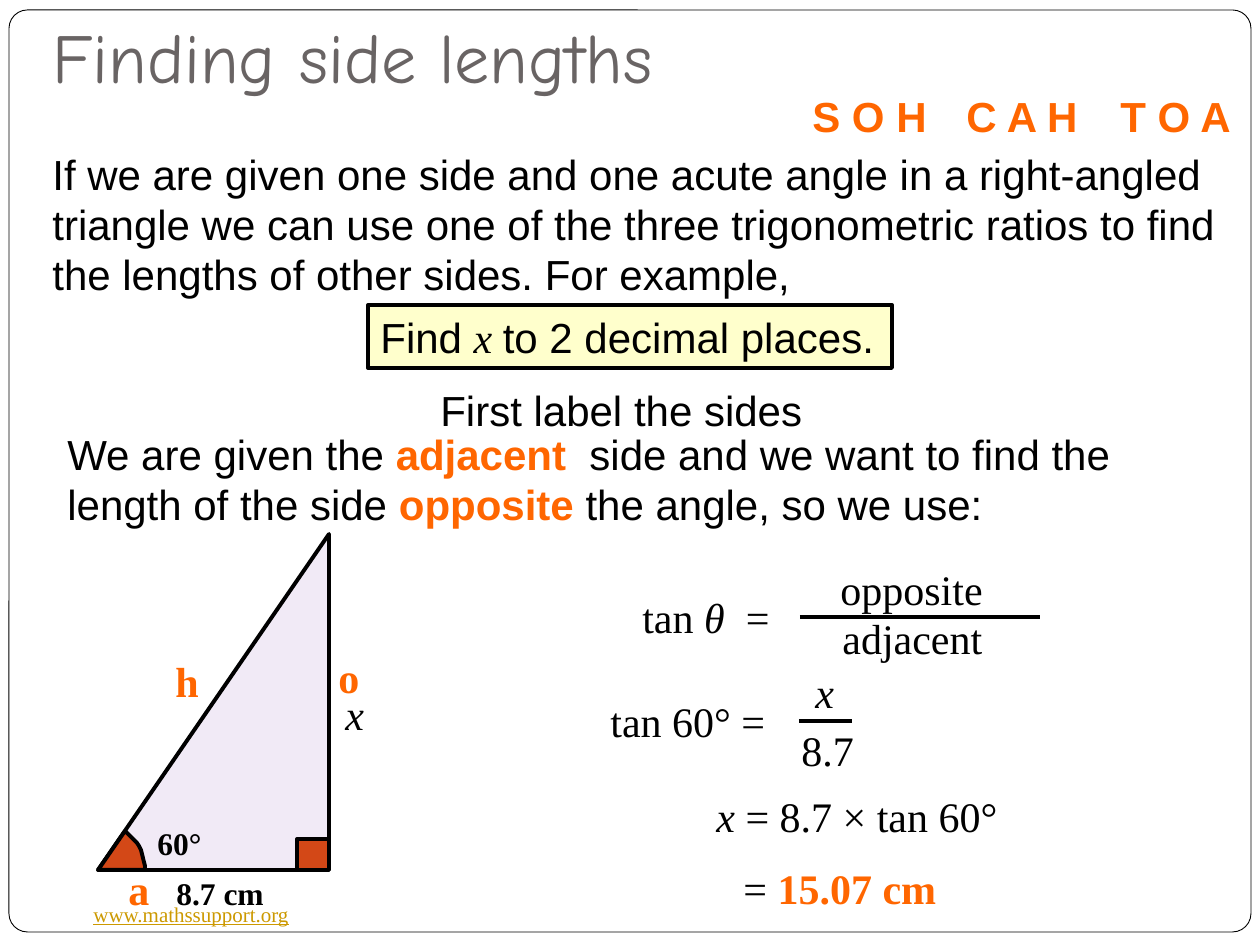
import math
from dataclasses import dataclass

from lxml import etree
from pptx import Presentation
from pptx import util as u
from pptx.dml.color import RGBColor
from pptx.enum import shapes, text
from pptx.oxml.ns import qn


@dataclass(frozen=True)
class Theme:
    sans: str = "Arial"
    serif: str = "Times New Roman"
    display: str = "Comic Neue"
    black: str = "000000"
    white: str = "FFFFFF"
    grey: str = "696464"
    orange: str = "FF6600"
    gold: str = "CC9900"
    lilac: str = "F1EAF6"
    rust: str = "D34817"
    cream: str = "FFFFCC"
    shade: str = "DDDDDD"
    title: int = 40
    body: int = 24
    label: int = 18
    small: int = 12
    stroke: float = 2.25


T = Theme()
PX = 914400 / 126


def px(*lengths):
    return [u.Emu(round(n * PX)) for n in lengths]


def write(sp, runs, font, size=T.body, wrap=False):
    """Fill a shape with one paragraph of (text, colour, style) runs; style holds b, i, u, or s for serif."""
    tf = sp.text_frame
    tf.word_wrap = wrap
    tf.auto_size = text.MSO_AUTO_SIZE.SHAPE_TO_FIT_TEXT
    p = tf.paragraphs[0]
    p.alignment = text.PP_ALIGN.LEFT
    for words, colour, style in runs:
        r = p.add_run()
        r.text = words
        r.font.name = T.serif if "s" in style else font
        r.font.size = u.Pt(size)
        r.font.bold = "b" in style
        r.font.italic = "i" in style
        r.font.underline = "u" in style
        r.font.color.rgb = RGBColor.from_string(colour)


prs = Presentation()
prs.slide_width, prs.slide_height = px(1260, 945)
s = prs.slides.add_slide(prs.slide_layouts[6])

# Frame, triangle, right-angle mark, question box and angle sector
kinds = shapes.MSO_SHAPE
frame = s.shapes.add_shape(kinds.ROUNDED_RECTANGLE, *px(9, 10, 1242, 922))
frame.adjustments[0] = 0.02
triangle = s.shapes.add_shape(kinds.RIGHT_TRIANGLE, *px(98, 534, 231, 336))
triangle._element.spPr.find(qn("a:xfrm")).set("flipH", "1")

radius, cx, cy = 47, 98, 870
arc = [(cx + radius * math.cos(math.radians(a)), cy - radius * math.sin(math.radians(a)))
       for a in range(0, 56, 5)]
builder = s.shapes.build_freeform(cx, cy, scale=PX)
builder.add_line_segments(arc, close=True)
sector = builder.convert_to_shape()

right_angle = s.shapes.add_shape(kinds.RECTANGLE, *px(297, 839, 32, 31))
question = s.shapes.add_shape(kinds.RECTANGLE, *px(368, 305, 524, 63))

for sp, fill, width in [
    (frame, T.white, 0.5),
    (triangle, T.lilac, T.stroke),
    (sector, T.rust, T.stroke),
    (right_angle, T.rust, T.stroke),
    (question, T.cream, T.stroke),
]:
    sp.shadow.inherit = False
    sp.fill.solid()
    sp.fill.fore_color.rgb = RGBColor.from_string(fill)
    sp.line.color.rgb = RGBColor.from_string(T.black)
    sp.line.width = u.Pt(width)

write(question, [("Find ", T.black, ""), ("x ", T.black, "is"),
                 ("to 2 decimal places.", T.black, "")], T.sans)

# Title
title = s.shapes.add_textbox(*px(40, 26, 1071, 84))
write(title, [("Finding side lengths", T.grey, "")], T.display, T.title, wrap=True)
title.text_frame.auto_size = text.MSO_AUTO_SIZE.NONE
title.text_frame.vertical_anchor = text.MSO_ANCHOR.BOTTOM
title.text_frame.margin_bottom = u.Inches(0.1)

# Sentences
for box, runs in [
    ((40, 142, 1188, 165), [
        ("If we are given one side and one acute angle in a right-angled triangle "
         "we can use one of the three trigonometric ratios to find the lengths of "
         "other sides. For example,", T.black, "")]),
    ((428, 378, 431, 63), [("First label the sides", T.black, "")]),
    ((55, 422, 1157, 115), [
        ("We are given the ", T.black, ""), ("adjacent", T.orange, "b"),
        ("  side and we want to find the length of the side ", T.black, ""),
        ("opposite", T.orange, "b"), (" the angle, so we use:", T.black, "")]),
]:
    write(s.shapes.add_textbox(*px(*box)), runs, T.sans, wrap=True)

# Triangle labels, working and footer
for box, size, runs in [
    ((145, 818, 73, 50), T.label, [("60°", T.black, "b")]),
    ((164, 868, 125, 50), T.label, [("8.7 cm", T.black, "b")]),
    ((333, 682, 44, 63), T.body, [("x", T.black, "i")]),
    ((163, 649, 52, 63), T.body, [("h", T.orange, "b")]),
    ((116, 857, 49, 63), T.body, [("a", T.orange, "b")]),
    ((326, 645, 48, 63), T.body, [("o", T.orange, "b")]),
    ((630, 585, 165, 64), T.body, [("tan ", T.black, ""), ("θ  ", T.black, "i"),
                                   ("=", T.black, "")]),
    ((828, 557, 192, 64), T.body, [("opposite", T.black, "")]),
    ((830, 606, 198, 64), T.body, [("adjacent", T.black, "")]),
    ((598, 689, 205, 64), T.body, [("tan 60° =", T.black, "")]),
    ((803, 660, 44, 63), T.body, [("x", T.black, "i")]),
    ((789, 718, 88, 64), T.body, [("8.7", T.black, "")]),
    ((704, 784, 344, 63), T.body, [("x", T.black, "i"), (" = 8.7 × tan 60°", T.black, "")]),
    ((731, 856, 261, 63), T.body, [("=", T.black, ""), (" 15.07 cm", T.orange, "b")]),
    ((81, 895, 223, 38), T.small, [("www.mathssupport.org", T.gold, "u")]),
]:
    write(s.shapes.add_textbox(*px(*box)), runs, T.serif, size)

# Fraction bars
for x1, x2, y in [(800, 1040, 617), (799, 852, 721)]:
    bar = s.shapes.add_connector(shapes.MSO_CONNECTOR.STRAIGHT, *px(x1, y, x2, y))
    bar.line.color.rgb = RGBColor.from_string(T.black)
    bar.line.width = u.Pt(T.stroke)
    etree.SubElement(bar._element.spPr, qn("a:effectLst"))

# Mnemonic with shadowed letters
for i, letters in enumerate(["S O H", "C A H", "T O A"]):
    sp = s.shapes.add_textbox(*px(800 + 154 * i, 84, 140, 63))
    write(sp, [(letters, T.orange, "b")], T.sans)
    effects = etree.Element(qn("a:effectLst"))
    shadow = etree.SubElement(effects, qn("a:outerShdw"), dist="38100", dir="2700000")
    etree.SubElement(shadow, qn("a:srgbClr"), val=T.shade)
    r = sp.text_frame.paragraphs[0].runs[0]
    r._r.rPr.find(qn("a:solidFill")).addnext(effects)

prs.save("out.pptx")
